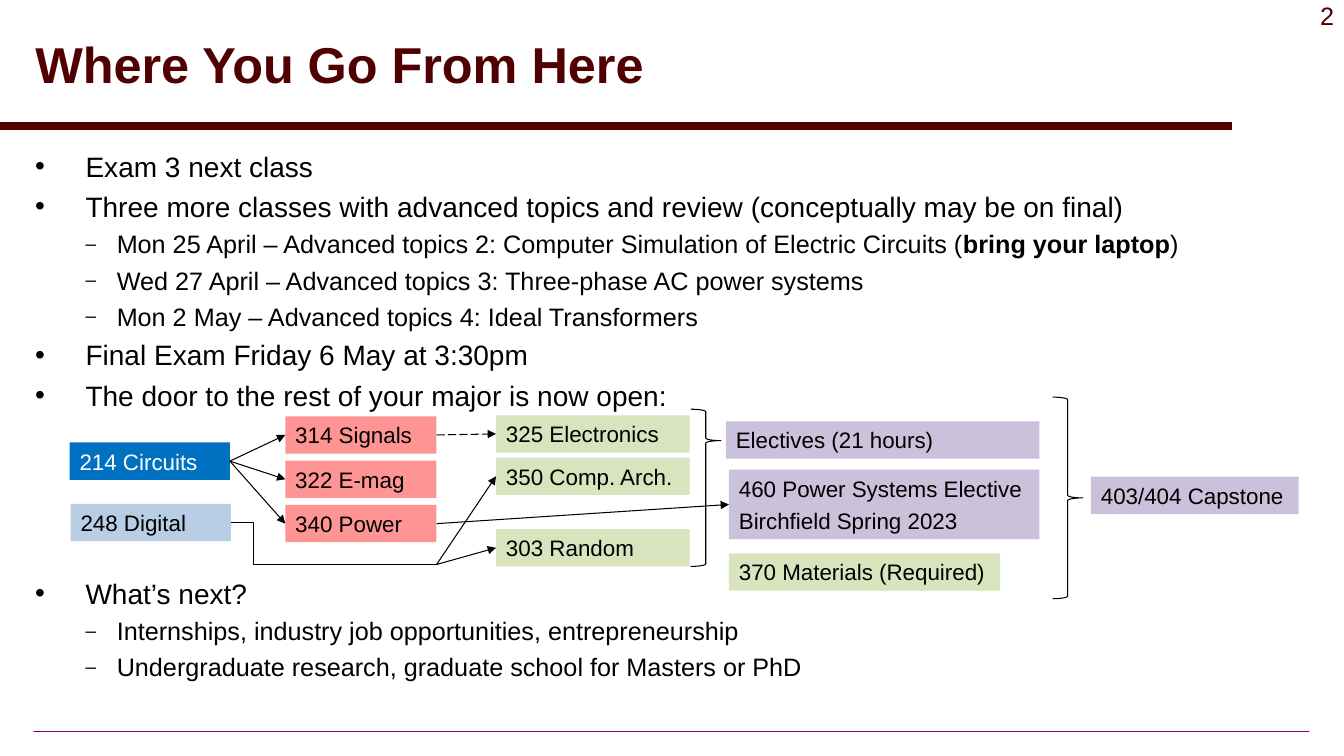
from dataclasses import dataclass

from lxml.etree import SubElement
from pptx import Presentation
from pptx.dml.color import RGBColor
from pptx.enum.dml import MSO_LINE
from pptx.enum.shapes import MSO_CONNECTOR, MSO_SHAPE
from pptx.enum.text import MSO_ANCHOR, MSO_AUTO_SIZE, PP_ALIGN
from pptx.oxml.ns import qn
from pptx.util import Inches, Pt


@dataclass(frozen=True)
class Theme:
    font: str = "Arial"
    maroon: str = "500000"
    black: str = "000000"
    white: str = "FFFFFF"
    blue: str = "0070C0"
    pale_blue: str = "B9CDE5"
    red: str = "FF9494"
    green: str = "D7E4BD"
    purple: str = "CCC1DA"
    footer_start: str = "800080"
    footer_end: str = "E7E1E7"
    title_size: int = 36
    topic_size: int = 20
    detail_size: int = 18
    course_size: int = 16
    thin: float = 0.75
    thick: float = 6


@dataclass(frozen=True)
class Bullet:
    spans: tuple
    level: int = 0
    before: float = 4.7


@dataclass(frozen=True)
class Course:
    text: str
    left: float
    top: float
    width: float
    fill: str
    height: float = 0.37


@dataclass(frozen=True)
class Link:
    source: str
    target: str
    dashed: bool = False


THEME = Theme()
LEFT_SITE, RIGHT_SITE = 1, 3
JUNCTION = (4.33, 5.6)

BULLETS = (
    Bullet(("Exam 3 next class",), before=0),
    Bullet(("Three more classes with advanced topics and review (conceptually may be on final)",)),
    Bullet(("Mon 25 April – Advanced topics 2: Computer Simulation of Electric Circuits (",
            "bring your laptop", ")"), 1, 4.2),
    Bullet(("Wed 27 April – Advanced topics 3: Three-phase AC power systems",), 1, 4.2),
    Bullet(("Mon 2 May – Advanced topics 4: Ideal Transformers",), 1, 4.2),
    Bullet(("Final Exam Friday 6 May at 3:30pm",)),
    Bullet(("The door to the rest of your major is now open:",)),
    Bullet(("What’s next?",), before=117.5),
    Bullet(("Internships, industry job opportunities, entrepreneurship",), 1, 4.2),
    Bullet(("Undergraduate research, graduate school for Masters or PhD",), 1, 4.2),
)

COURSES = (
    Course("214 Circuits", 0.69, 4.39, 1.59, THEME.blue),
    Course("248 Digital", 0.7, 5, 1.59, THEME.pale_blue),
    *(Course(text, 2.83, 4.13 + 0.44 * row, 1.5, THEME.red)
      for row, text in enumerate(("314 Signals", "322 E-mag", "340 Power"))),
    Course("325 Electronics", 4.92, 4.12, 1.92, THEME.green),
    Course("350 Comp. Arch.", 4.92, 4.54, 1.92, THEME.green),
    Course("303 Random", 4.92, 5.25, 1.92, THEME.green),
    Course("370 Materials (Required)", 7.23, 5.49, 2.69, THEME.green),
    Course("460 Power Systems Elective\nBirchfield Spring 2023", 7.23, 4.66, 3.08, THEME.purple, 0.69),
    Course("Electives (21 hours)", 7.2, 4.18, 3.11, THEME.purple),
    Course("403/404 Capstone", 10.82, 4.73, 2.06, THEME.purple),
)

LINKS = (
    Link("214", "314"), Link("214", "322"), Link("214", "340"),
    Link("314", "325", True), Link("340", "460"),
)


def style(span, size, color=THEME.black, bold=False):
    span.font.name = THEME.font
    span.font.size = Pt(size)
    span.font.bold = bold
    span.font.color.rgb = RGBColor.from_string(color)


def add_text(page, left, top, width, height):
    box = page.shapes.add_textbox(*map(Inches, (left, top, width, height)))
    box.text_frame.word_wrap = True
    return box


def set_outline(shape, color, width):
    shape.line.color.rgb = RGBColor.from_string(color)
    shape.line.width = Pt(width)


def add_title(page):
    title = page.shapes.title
    title.left, title.top, title.width, title.height = map(Inches, (0.25, 0.08, 11.92, 1.17))
    frame = title.text_frame
    frame.text = "Where You Go From Here"
    frame.auto_size = MSO_AUTO_SIZE.NONE
    frame.vertical_anchor = MSO_ANCHOR.MIDDLE
    para = frame.paragraphs[0]
    para.alignment = PP_ALIGN.LEFT
    para.line_spacing = 0.9
    style(para.runs[0], THEME.title_size, THEME.maroon, True)


def add_page_number(page):
    para = add_text(page, 12.13, -0.05, 1.2, 0.4).text_frame.paragraphs[0]
    para.text = "2"
    para.alignment = PP_ALIGN.RIGHT
    style(para.runs[0], THEME.detail_size, THEME.maroon)


def add_footer_rule(page):
    rule = page.shapes.add_shape(MSO_SHAPE.RECTANGLE, *map(Inches, (0.33, 7.25, 12.66, 0.01)))
    rule.shadow.inherit = False
    rule.line.fill.background()
    rule.fill.gradient()
    for stop, color in zip(rule.fill.gradient_stops, (THEME.footer_start, THEME.footer_end)):
        stop.color.rgb = RGBColor.from_string(color)
    gradient = rule.element.spPr.find(qn("a:gradFill"))
    gradient.remove(gradient.find(qn("a:lin")))
    shade = SubElement(gradient, qn("a:path"), path="shape")
    SubElement(shade, qn("a:fillToRect"), l="50000", t="50000", r="50000", b="50000")


def set_bullet(para, level):
    indent, hanging, mark, scale = ((0.5, 0.5, "•", 100), (0.81, 0.31, "–", 75))[level]
    para.level = level
    properties = para._p.get_or_add_pPr()
    properties.set("marL", str(Inches(indent)))
    properties.set("indent", str(-Inches(hanging)))
    SubElement(SubElement(properties, qn("a:buClr")), qn("a:srgbClr"), val=THEME.black)
    SubElement(properties, qn("a:buSzPct"), val=str(scale * 1000))
    SubElement(properties, qn("a:buFont"), typeface=THEME.font)
    SubElement(properties, qn("a:buChar"), char=mark)


def add_bullets(page):
    frame = add_text(page, 0.25, 1.43, 11.92, 5.65).text_frame
    for index, bullet in enumerate(BULLETS):
        para = frame.add_paragraph() if index else frame.paragraphs[0]
        set_bullet(para, bullet.level)
        if index:
            para.space_before = Pt(bullet.before)
        for position, text in enumerate(bullet.spans):
            span = para.add_run()
            span.text = text
            size = THEME.detail_size if bullet.level else THEME.topic_size
            style(span, size, bold=position == 1)


def add_course(page, course: Course):
    box = add_text(page, course.left, course.top, course.width, course.height)
    box.fill.solid()
    box.fill.fore_color.rgb = RGBColor.from_string(course.fill)
    frame = box.text_frame
    frame.text = course.text
    frame.vertical_anchor = MSO_ANCHOR.MIDDLE
    color = THEME.white if course.fill == THEME.blue else THEME.black
    for index, para in enumerate(frame.paragraphs):
        if index:
            para.space_before = Pt(4)
        style(para.runs[0], THEME.course_size, color)
    return box


def add_line(page, start, end, color=THEME.black, width=THEME.thin, arrow=False, kind=MSO_CONNECTOR.STRAIGHT):
    line = page.shapes.add_connector(kind, *map(Inches, (*start, *end)))
    set_outline(line, color, width)
    if arrow:
        SubElement(line.line._get_or_add_ln(), qn("a:tailEnd"), type="triangle")
    SubElement(line._element.spPr, qn("a:effectLst"))
    return line


def add_links(page, boxes):
    for link in LINKS:
        line = add_line(page, (0, 0), (1, 1), arrow=True)
        line.begin_connect(boxes[link.source], RIGHT_SITE)
        line.end_connect(boxes[link.target], LEFT_SITE)
        if link.dashed:
            line.line.dash_style = MSO_LINE.LONG_DASH
    for target in ("303", "350"):
        add_line(page, JUNCTION, (4.92, 5), arrow=True).end_connect(boxes[target], LEFT_SITE)
    elbow = add_line(page, (2.29, 5.18), JUNCTION, kind=MSO_CONNECTOR.ELBOW)
    guides = elbow._element.spPr.find(qn("a:prstGeom")).get_or_add_avLst()
    SubElement(guides, qn("a:gd"), name="adj1", fmla="val 11000")


def add_brace(page, left, top, height, point):
    brace = page.shapes.add_shape(MSO_SHAPE.RIGHT_BRACE, *map(Inches, (left, top, 0.3, height)))
    brace.shadow.inherit = False
    brace.fill.background()
    set_outline(brace, THEME.black, THEME.thin)
    brace.adjustments[1] = point


def main():
    deck = Presentation()
    deck.slide_width, deck.slide_height = Inches(13.33), Inches(7.5)
    page = deck.slides.add_slide(deck.slide_layouts.get_by_name("Title Only"))
    add_footer_rule(page)
    add_line(page, (0, 1.25), (12.22, 1.25), THEME.maroon, THEME.thick)
    add_page_number(page)
    add_title(page)
    add_bullets(page)
    boxes = {course.text.split()[0]: add_course(page, course) for course in COURSES}
    add_links(page, boxes)
    add_brace(page, 10.44, 3.94, 2, 0.5)
    add_brace(page, 6.85, 4.06, 1.56, 0.2)
    deck.save("out.pptx")


if __name__ == "__main__":
    main()
